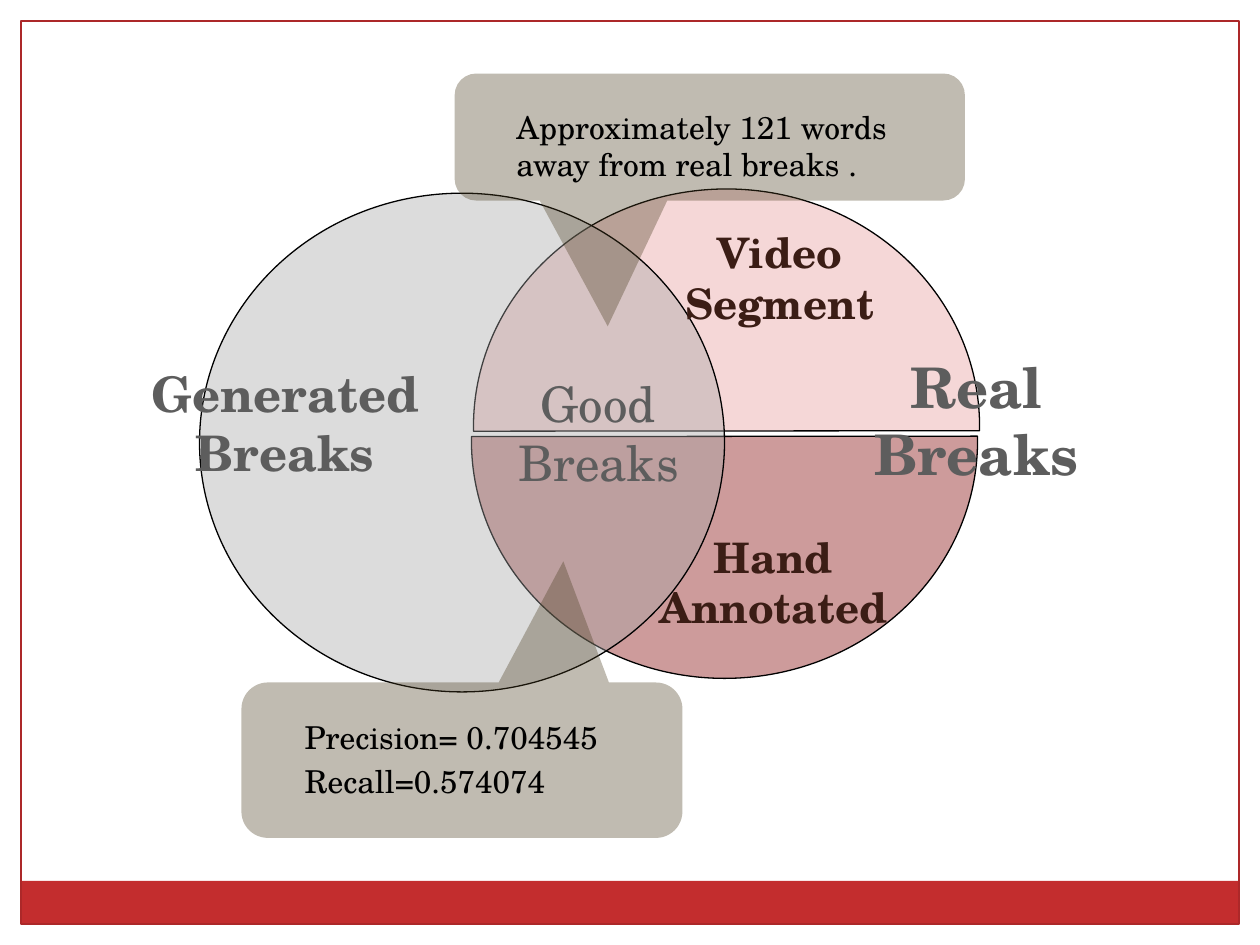
"""Build a Venn diagram slide comparing generated breaks with real breaks."""
import pptx
import pptx.dml.color
import pptx.enum.shapes
import pptx.enum.text
import pptx.oxml
import pptx.oxml.ns
import pptx.util
from dataclasses import dataclass

Kind = pptx.enum.shapes.MSO_SHAPE


@dataclass(frozen=True)
class Theme:
    font: str = "TeX Gyre Schola"
    band: str = "C32D2E"
    frame: str = "AC2829"
    outline: str = "000000"
    generated: str = "A6A6A6"
    video: str = "EBA7A8"
    annotated: str = "922222"
    callout: str = "4B3E21"
    heading: str = "5D5D5D"
    segment: str = "3B1D15"
    note: str = "000000"
    note_size: int = 18
    segment_size: int = 24
    set_size: int = 28
    real_size: int = 32
    line: float = 0.75


THEME = Theme()
WIDTH, HEIGHT = 10, 7.5
COLUMNS, ROWS = 120, 90
HALF_CHORD = (107.33, 0.61)

FRAME = [
    (Kind.RECTANGLE, (2, 83.9, 116, 4.1), THEME.band, None),
    (Kind.RECTANGLE, (2, 2, 116, 86), None, THEME.frame),
]
SETS = [
    (Kind.CHORD, (45.1, 18, 48.2, 45.2), THEME.video, 45, HALF_CHORD, 0),
    (Kind.CHORD, (44.9, 19.4, 48.2, 45.2), THEME.annotated, 45, HALF_CHORD, 180),
    (Kind.OVAL, (19, 18.4, 50, 47.5), THEME.generated, 39, (), 0),
]
LABELS = [
    ("Generated Breaks", (11, 34, 32.3, 12.5), THEME.set_size, THEME.heading, True),
    ("Real Breaks", (80, 33, 26, 14.2), THEME.real_size, THEME.heading, True),
    ("Good Breaks", (48, 35, 18, 8.8), THEME.set_size, THEME.heading, False),
    ("Video Segment", (63, 21, 22.5, 10.9), THEME.segment_size, THEME.segment, True),
    ("Hand Annotated", (61, 50, 25.3, 10.9), THEME.segment_size, THEME.segment, True),
]
CALLOUTS = [
    (["Precision= 0.704545", "Recall=0.574074"], (23, 65, 42, 14.8), (0.23, -1.28, 0.17)),
    (["Approximately 121 words away from real breaks ."], (43.3, 7, 48.6, 12.1), (-0.2, 1.49, 0.17)),
]


def place(cells):
    steps = (WIDTH / COLUMNS, HEIGHT / ROWS) * 2
    return [pptx.util.Inches(cell * step) for cell, step in zip(cells, steps)]


def color(code):
    return pptx.dml.color.RGBColor.from_string(code)


def add_shape(page, kind, cells, fill=None, line=None, opacity=100, adjustments=(), rotation=0):
    shape = page.shapes.add_shape(kind, *place(cells))
    shape.shadow.inherit = False
    shape.rotation = rotation
    for index, value in enumerate(adjustments):
        shape.adjustments[index] = value
    if fill:
        shape.fill.solid()
        shape.fill.fore_color.rgb = color(fill)
        if opacity < 100:
            tone = shape.fill._xPr.find(".//" + pptx.oxml.ns.qn("a:srgbClr"))
            alpha = pptx.oxml.parse_xml(f'<a:alpha {pptx.oxml.ns.nsdecls("a")} val="{opacity * 1000}"/>')
            tone.append(alpha)
    else:
        shape.fill.background()
    if line:
        shape.line.color.rgb = color(line)
        shape.line.width = pptx.util.Pt(THEME.line)
    else:
        shape.line.fill.background()
    return shape


def add_text(frame, lines, size, ink, bold, align, space=0):
    frame.word_wrap = True
    frame.vertical_anchor = pptx.enum.text.MSO_ANCHOR.TOP
    for index, line in enumerate(lines):
        para = frame.add_paragraph() if index else frame.paragraphs[0]
        para.alignment = align
        para.space_before = pptx.util.Pt(space)
        span = para.add_run()
        span.text = line
        span.font.name = THEME.font
        span.font.size = pptx.util.Pt(size)
        span.font.bold = bold
        span.font.color.rgb = color(ink)


def add_label(page, text, cells, size, ink, bold):
    box = page.shapes.add_textbox(*place(cells))
    add_text(box.text_frame, [text], size, ink, bold, pptx.enum.text.PP_ALIGN.CENTER)
    box.text_frame.auto_size = pptx.enum.text.MSO_AUTO_SIZE.SHAPE_TO_FIT_TEXT


def add_callout(page, lines, cells, adjustments):
    shape = add_shape(page, Kind.ROUNDED_RECTANGULAR_CALLOUT, cells, THEME.callout,
                      opacity=35, adjustments=adjustments)
    frame = shape.text_frame
    frame.margin_left = frame.margin_right = pptx.util.Inches(0.44)
    frame.margin_top = frame.margin_bottom = pptx.util.Inches(0.22)
    add_text(frame, lines, THEME.note_size, THEME.note, False,
             pptx.enum.text.PP_ALIGN.LEFT, THEME.note_size * 0.2)


def main():
    deck = pptx.Presentation()
    deck.slide_width = pptx.util.Inches(WIDTH)
    deck.slide_height = pptx.util.Inches(HEIGHT)
    page = deck.slides.add_slide(deck.slide_layouts[6])
    for part in FRAME:
        add_shape(page, *part)
    for kind, cells, fill, opacity, adjustments, rotation in SETS:
        add_shape(page, kind, cells, fill, THEME.outline, opacity, adjustments, rotation)
    for label in LABELS:
        add_label(page, *label)
    for callout in CALLOUTS:
        add_callout(page, *callout)
    deck.save("out.pptx")


if __name__ == "__main__":
    main()
